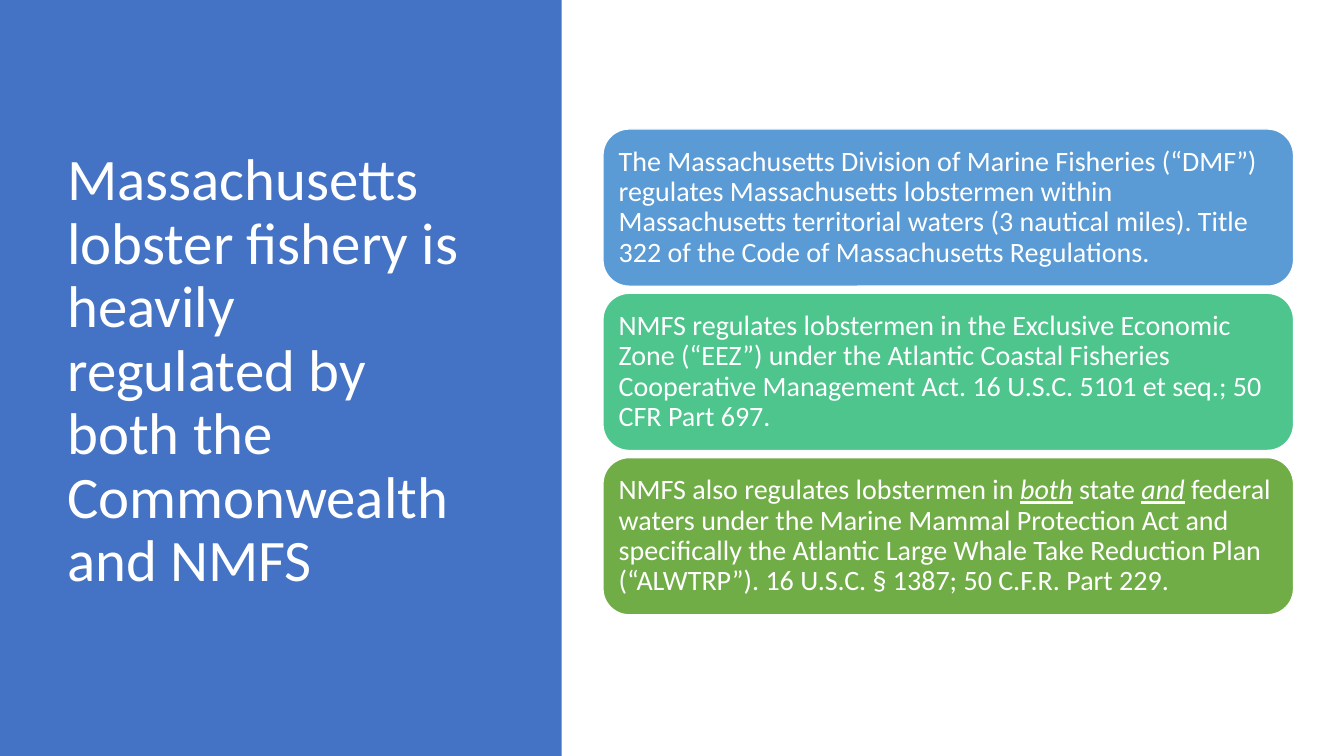
from dataclasses import dataclass

from pptx import Presentation
from pptx.dml.color import RGBColor
from pptx.enum.shapes import MSO_SHAPE
from pptx.enum.text import MSO_ANCHOR, PP_ALIGN
from pptx.util import Inches, Pt


@dataclass(frozen=True)
class Theme:
    font: str = "Calibri"
    title_size: int = 42
    body_size: int = 20
    line_spacing: float = 0.9
    white: str = "FFFFFF"
    panel: str = "4472C4"
    cards: tuple = ("5B9BD5", "4DC58D", "70AD47")


class SlideBuilder:
    def __init__(self, slide, theme):
        self.s = slide
        self.theme = theme

    def shape(self, kind, box, fill):
        sp = self.s.shapes.add_shape(kind, *map(Inches, box))
        sp.shadow.inherit = False
        sp.fill.solid()
        sp.fill.fore_color.rgb = RGBColor.from_string(fill)
        sp.line.fill.background()
        return sp

    def add_text(self, tf, runs, size):
        """Fill a frame with (text, emphasised) runs."""
        tf.word_wrap = True
        tf.vertical_anchor = MSO_ANCHOR.MIDDLE
        p = tf.paragraphs[0]
        p.alignment = PP_ALIGN.LEFT
        p.line_spacing = self.theme.line_spacing
        for text, emphasised in runs:
            r = p.add_run()
            r.text = text
            r.font.name = self.theme.font
            r.font.size = Pt(size)
            r.font.color.rgb = RGBColor.from_string(self.theme.white)
            if emphasised:
                r.font.italic = r.font.underline = True

    def title(self, box, text):
        sp = self.s.shapes.add_textbox(*map(Inches, box))
        self.add_text(sp.text_frame, [(text, False)], self.theme.title_size)

    def card(self, box, fill, runs):
        sp = self.shape(MSO_SHAPE.ROUNDED_RECTANGLE, box, fill)
        sp.line.color.rgb = RGBColor.from_string(self.theme.white)
        sp.line.width = Pt(1)
        tf = sp.text_frame
        tf.margin_left = tf.margin_right = Inches(0.08)
        tf.margin_top = tf.margin_bottom = Inches(0.08)
        self.add_text(tf, runs, self.theme.body_size)


CARD_TEXTS = [
    [("The Massachusetts Division of Marine Fisheries (“DMF”) regulates "
      "Massachusetts lobstermen within Massachusetts territorial waters "
      "(3 nautical miles). Title 322 of the Code of Massachusetts "
      "Regulations.", False)],
    [("NMFS regulates lobstermen in the Exclusive Economic Zone (“EEZ”) under "
      "the Atlantic Coastal Fisheries Cooperative Management Act. "
      "16 U.S.C. 5101 et seq.; 50 CFR Part 697.", False)],
    [("NMFS also regulates lobstermen in ", False), ("both", True),
     (" state ", False), ("and", True),
     (" federal waters under the Marine Mammal Protection Act and "
      "specifically the Atlantic Large Whale Take Reduction Plan (“ALWTRP”). "
      "16 U.S.C. § 1387; 50 C.F.R. Part 229.", False)],
]


def main():
    prs = Presentation()
    prs.slide_width, prs.slide_height = Inches(13.33), Inches(7.5)
    theme = Theme()
    builder = SlideBuilder(prs.slides.add_slide(prs.slide_layouts[6]), theme)

    # Title panel
    builder.shape(MSO_SHAPE.RECTANGLE, (0, 0, 5.57, 7.5), theme.panel)
    builder.title((0.57, 0.68, 4.16, 6.02),
                  "Massachusetts lobster fishery is heavily regulated by "
                  "both the Commonwealth and NMFS")

    # Stack of regulation cards
    top, height, pitch = 1.28, 1.56, 1.63
    for i, (fill, runs) in enumerate(zip(theme.cards, CARD_TEXTS)):
        builder.card((5.98, top + i * pitch, 6.85, height), fill, runs)

    prs.save("out.pptx")


if __name__ == "__main__":
    main()
